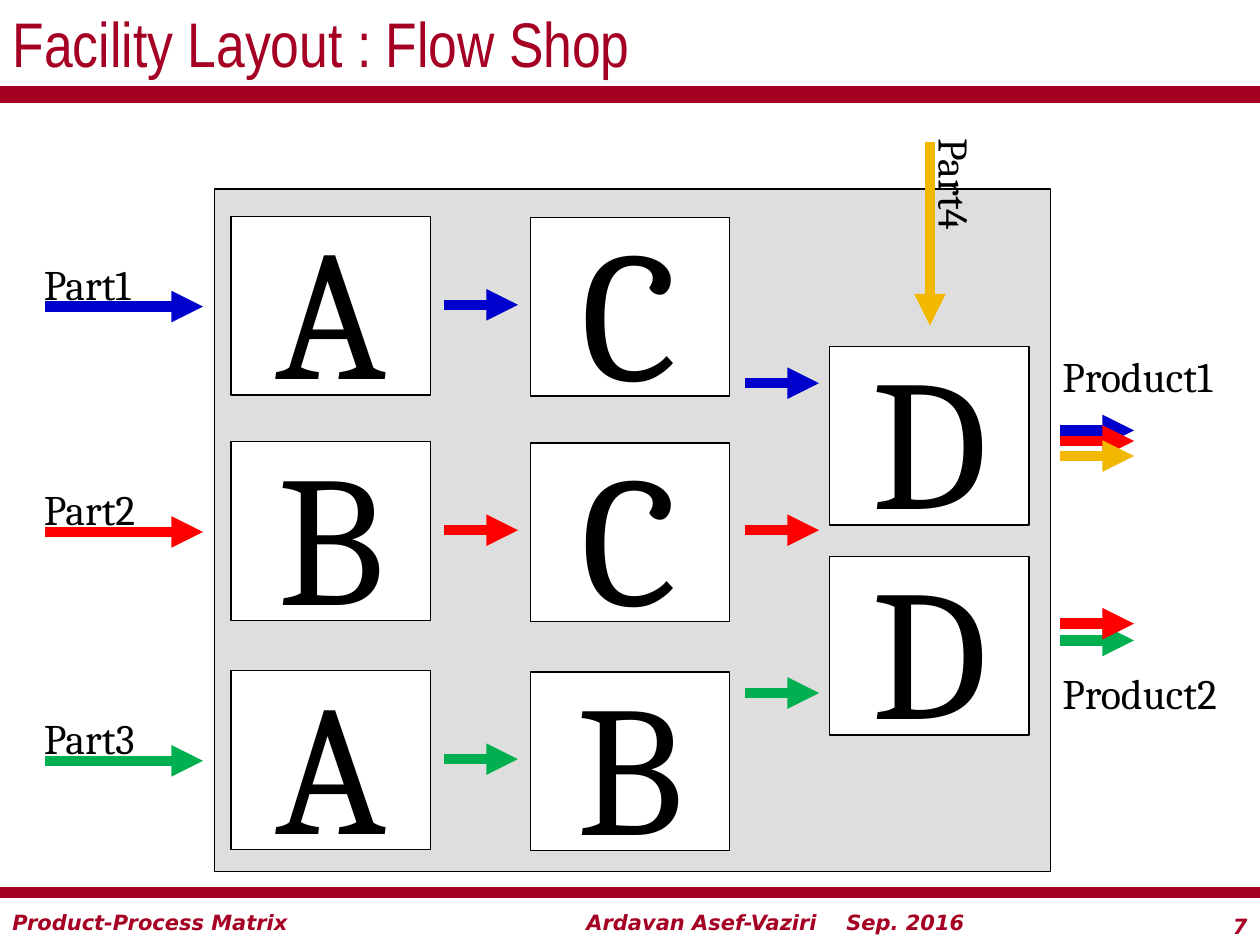
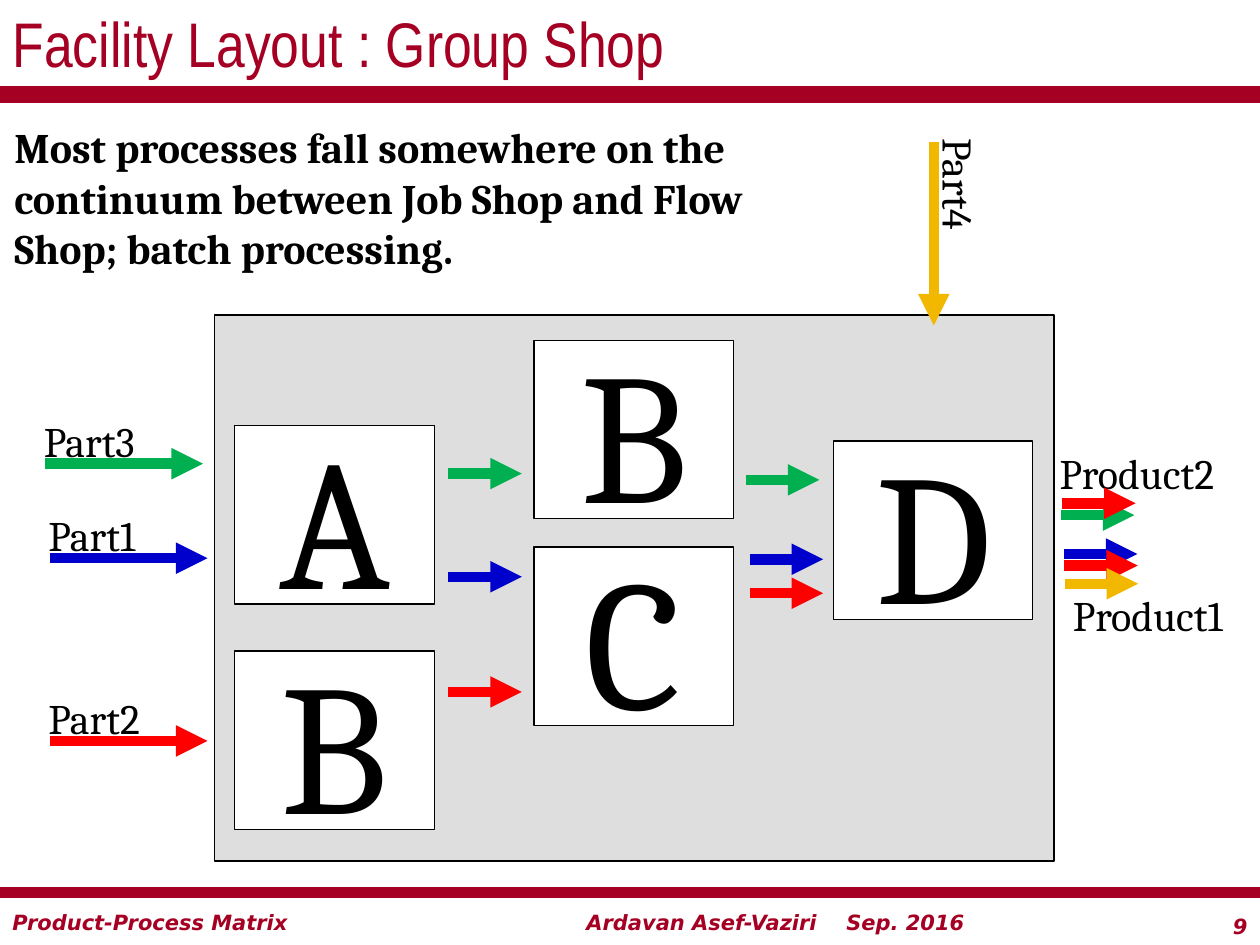
"""Build two slides that compare flow shop and group shop layouts."""
from lxml import etree
from pptx import Presentation
from pptx.dml.color import RGBColor
from pptx.enum import shapes, text
from pptx.oxml import ns
from pptx.util import Pt

WINE = RGBColor(0xA5, 0x00, 0x23)
BLACK = RGBColor(0, 0, 0)
WHITE = RGBColor(0xFF, 0xFF, 0xFF)
GREY = RGBColor(0xBF, 0xBF, 0xBF)
BLUE = RGBColor(0, 0, 0xCC)
RED = RGBColor(0xFF, 0, 0)
GREEN = RGBColor(0, 0xB0, 0x50)
GOLD = RGBColor(0xF2, 0xB8, 0)

SERIF, NARROW, SANS = "Cambria", "Arial Narrow", "DejaVu Sans"
WIDE, HIGH = 114, 102
PITCH = 171
STEP, LEAD = 42, 90


def write(frame, words, size=24, font=SERIF, color=BLACK, bold=False,
          slant=False, align=text.PP_ALIGN.LEFT, anchor=text.MSO_ANCHOR.TOP,
          wrap=True):
    frame.auto_size = text.MSO_AUTO_SIZE.NONE
    frame.word_wrap = wrap
    frame.vertical_anchor = anchor
    para = frame.paragraphs[0]
    para.alignment = align
    run = para.add_run()
    run.text = words
    face = run.font
    face.size, face.name = Pt(size), font
    face.bold, face.italic = bold, slant
    face.color.rgb = color
    return para


def add(parent, tag, **attrs):
    node = etree.SubElement(parent, ns.qn(tag))
    for key, val in attrs.items():
        node.set(key, val)
    return node


def place(shape, *spot):
    shape.left, shape.top, shape.width, shape.height = map(Pt, spot)


class Deck:
    def __init__(self):
        self.show = Presentation()
        self.show.slide_width, self.show.slide_height = Pt(720), Pt(540)
        self.slide = None

    def start(self, title, page, body=None):
        layout = self.show.slide_layouts[1 if body else 5]
        self.slide = self.show.slides.add_slide(layout)
        head = self.slide.shapes.title
        place(head, 0, 0, 720, 48)
        write(head.text_frame, title, size=36, font=NARROW, color=WINE,
              anchor=text.MSO_ANCHOR.MIDDLE)
        if body:
            self.body(body)
        self.line(0, 54, 720, 54, WINE, 10)
        self.line(0, 510, 720, 510, WINE)
        foot = dict(size=12, font=SANS, color=WINE, bold=True, slant=True)
        self.label("Product-Process Matrix", 0, 516, 336, 22, **foot)
        self.label("Ardavan Asef-Vaziri", 328, 516, 148, 22, **foot)
        self.label("Sep. 2016", 476.5, 516, 93, 22, **foot)
        self.label(str(page), 666, 518.4, 54, 22,
                   align=text.PP_ALIGN.RIGHT, **foot)

    def body(self, words):
        hold = self.slide.placeholders[1]
        place(hold, 1, 66, 491, 72)
        para = write(hold.text_frame, words, bold=True)
        para.space_before = Pt(5)
        props = para._p.get_or_add_pPr()
        props.set("marL", "0")
        props.set("indent", "0")
        add(props, "a:buNone")

    def label(self, words, x, y, w, h, turn=0, **form):
        note = self.slide.shapes.add_textbox(*map(Pt, (x, y, w, h)))
        note.rotation = turn
        write(note.text_frame, words, **form)

    def rect(self, x, y, w, h, color):
        shape = self.slide.shapes.add_shape(
            shapes.MSO_SHAPE.RECTANGLE, *map(Pt, (x, y, w, h)))
        shape.shadow.inherit = False
        shape.fill.solid()
        shape.fill.fore_color.rgb = color
        shape.line.color.rgb = BLACK
        shape.line.width = Pt(0.75)
        return shape

    def hall(self, x, y, w, h):
        shape = self.rect(x, y, w, h, GREY)
        tint = shape._element.spPr.find(".//" + ns.qn("a:srgbClr"))
        add(tint, "a:alpha", val="50000")

    def cell(self, name, x, y):
        shape = self.rect(x, y, WIDE, HIGH, WHITE)
        write(shape.text_frame, name, size=106, wrap=False,
              align=text.PP_ALIGN.CENTER, anchor=text.MSO_ANCHOR.MIDDLE)

    def line(self, x, y, to_x, to_y, color, width=6):
        link = self.slide.shapes.add_connector(
            shapes.MSO_CONNECTOR.STRAIGHT, *map(Pt, (x, y, to_x, to_y)))
        link.line.color.rgb = color
        link.line.width = Pt(width)
        add(link._element.spPr, "a:effectLst")
        return link

    def arrow(self, x, y, to_x, to_y, color):
        link = self.line(x, y, to_x, to_y, color)
        stroke = link._element.spPr.find(ns.qn("a:ln"))
        add(stroke, "a:tailEnd", type="triangle")

    def step(self, x, y, color):
        self.arrow(x, y, x + STEP, y, color)

    def feed(self, name, x, y, color):
        self.label(name, x - 8, y - 31.2, 78, 37)
        self.arrow(x, y, x + LEAD, y, color)

    def drop(self, name, x):
        self.label(name, x - 34.5, 110, 105, 29, turn=90)
        self.arrow(x, 81, x, 186, GOLD)

    def good(self, name, x, y):
        self.label(name, x, y, 118, 36)


def flow(deck):
    deck.start("Facility Layout : Flow Shop", 7)
    deck.hall(122.4, 108, 478, 390)
    left = 132
    rows = (("Part1", BLUE, 175.2, "AC"), ("Part2", RED, 304, "BC"),
            ("Part3", GREEN, 434.8, "AB"))
    for name, color, y, cells in rows:
        deck.feed(name, 26, y, color)
        deck.step(254, y - 1, color)
        for col, cell in enumerate(cells):
            deck.cell(cell, left + col * PITCH, y - 51.5 + col * 0.7)
    for y in (198, 318):
        deck.cell("D", left + 2 * PITCH, y)
    for y, color in ((219, BLUE), (303, RED), (396, GREEN)):
        deck.step(426, y, color)
    outs = ((246, BLUE), (252, RED), (260.6, GOLD), (366, GREEN), (356.4, RED))
    for y, color in outs:
        deck.step(606, y, color)
    deck.good("Product1", 600, 196.6)
    deck.good("Product2", 600, 378)
    deck.drop("Part4", 531.4)


def group(deck):
    deck.start("Facility Layout : Group Shop", 9,
               "Most processes fall somewhere on the continuum between "
               "Job Shop and Flow Shop; batch processing.")
    deck.hall(122.4, 180, 480, 312)
    left = 134.2
    cells = (("A", 0, 243.2), ("B", 0, 372), ("B", 1, 194.4),
             ("C", 1, 312.6), ("D", 2, 252))
    for name, col, y in cells:
        deck.cell(name, left + col * PITCH, y)
    feeds = (("Part1", 28.6, 319, BLUE), ("Part2", 28.6, 423.4, RED),
             ("Part3", 26, 265, GREEN))
    for feed in feeds:
        deck.feed(*feed)
    deck.good("Product1", 606, 333.5)
    deck.good("Product2", 598.4, 252)
    steps = ((256.2, 329.6, BLUE), (256.2, 395.4, RED), (256.2, 270.6, GREEN),
             (428.4, 319.6, BLUE), (428.4, 339, RED), (426.2, 274.2, GREEN),
             (608, 316.6, BLUE), (608.2, 323.2, RED), (608.4, 333.6, GOLD),
             (606.2, 294.4, GREEN), (607, 287.6, RED))
    for step in steps:
        deck.step(*step)
    deck.drop("Part4", 533.6)


def main():
    deck = Deck()
    flow(deck)
    group(deck)
    deck.show.save("out.pptx")


if __name__ == "__main__":
    main()
